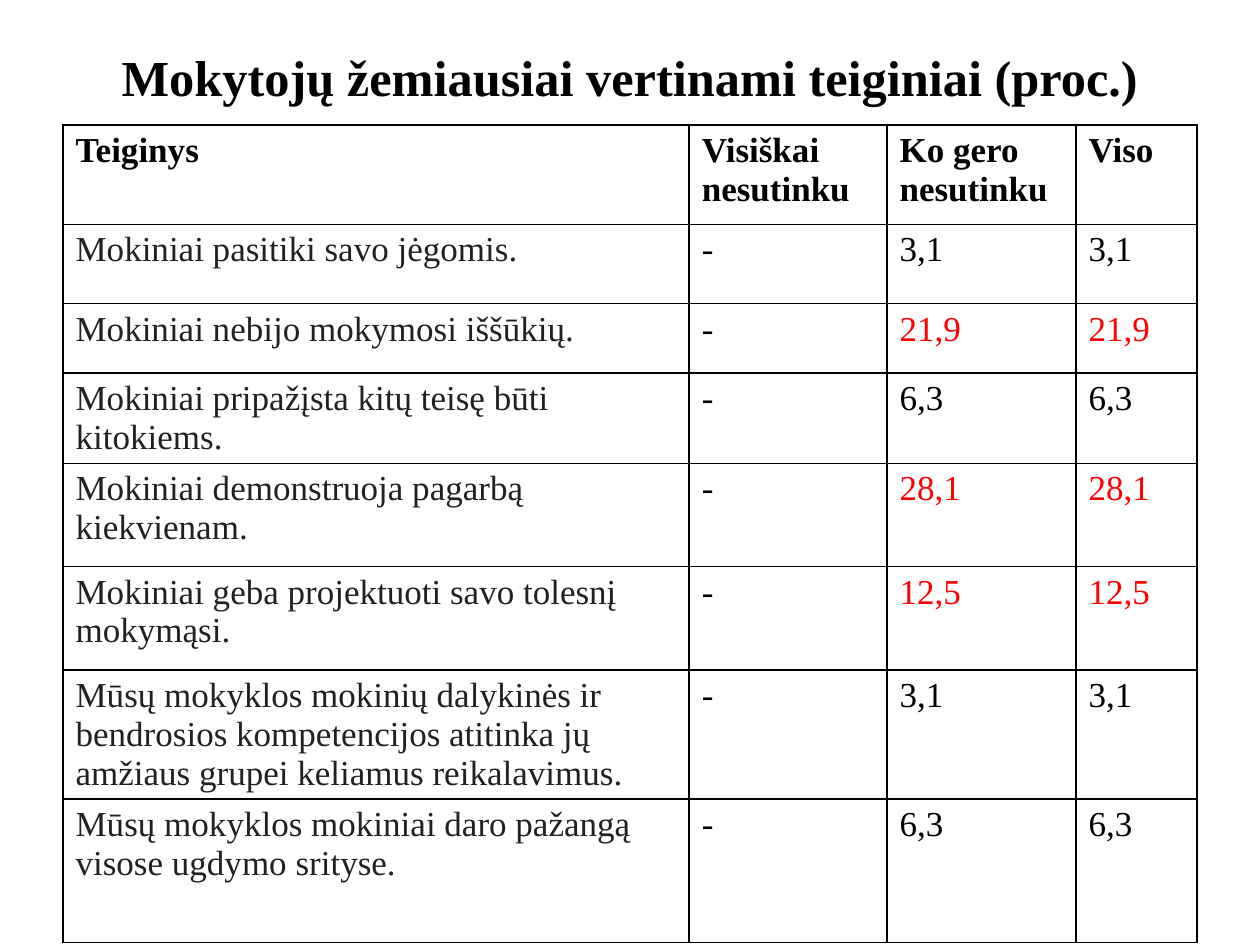
from dataclasses import dataclass

from lxml import etree
from pptx import Presentation
from pptx import util as u
from pptx.dml.color import RGBColor
from pptx.enum import text
from pptx.oxml import ns

EMU_PER_PX = 9144  # 100 px to the inch
FONT = "Times New Roman"
COLORS = {"black": "000000", "statement": "212121", "alert": "FF0000"}
ALERT_FROM = 10  # per cent
COLUMN_WIDTHS = [497, 157, 150, 96]
HEADER_HEIGHT = 79
HEADERS = ["Teiginys", "Visiškai nesutinku", "Ko gero nesutinku", "Viso"]


@dataclass
class Statement:
    wording: str
    rather_disagree: str
    height: int
    fully_disagree: str = "-"

    def cells(self) -> list[str]:
        """The total equals the only share that was given."""
        return [self.wording, self.fully_disagree, self.rather_disagree, self.rather_disagree]


STATEMENTS = [
    Statement("Mokiniai pasitiki savo jėgomis.", "3,1", 63),
    Statement("Mokiniai nebijo mokymosi iššūkių.", "21,9", 55),
    Statement("Mokiniai pripažįsta kitų teisę būti kitokiems.", "6,3", 46),
    Statement("Mokiniai demonstruoja pagarbą kiekvienam.", "28,1", 82),
    Statement("Mokiniai geba projektuoti savo tolesnį mokymąsi.", "12,5", 82),
    Statement("Mūsų mokyklos mokinių dalykinės ir bendrosios kompetencijos "
              "atitinka jų amžiaus grupei keliamus reikalavimus.", "3,1", 82),
    Statement("Mūsų mokyklos mokiniai daro pažangą visose ugdymo srityse.", "6,3", 114),
]


def px(length: int) -> u.Emu:
    return u.Emu(length * EMU_PER_PX)


def write(frame, wording: str, *, size: float, color: str = "black", bold: bool = False,
          align=text.PP_ALIGN.LEFT) -> None:
    paragraph = frame.paragraphs[0]
    paragraph.alignment = align
    run = paragraph.add_run()
    run.text = wording
    run.font.name = FONT
    run.font.size = u.Pt(size)
    run.font.bold = bold
    run.font.color.rgb = RGBColor.from_string(COLORS[color])


def add_borders(cell, color: str = "black", width: float = 1) -> None:
    properties = cell._tc.get_or_add_tcPr()
    for side in ("lnL", "lnR", "lnT", "lnB"):
        line = etree.SubElement(properties, ns.qn(f"a:{side}"), w=str(u.Pt(width)))
        fill = etree.SubElement(line, ns.qn("a:solidFill"))
        etree.SubElement(fill, ns.qn("a:srgbClr"), val=COLORS[color])


def value_color(value: str) -> str:
    if value == "-":
        return "black"
    return "alert" if float(value.replace(",", ".")) >= ALERT_FROM else "black"


def add_title(slide, wording: str) -> None:
    title = slide.shapes.title
    title.left, title.top, title.width, title.height = map(px, (50, 30, 900, 61))
    title.text_frame.vertical_anchor = text.MSO_ANCHOR.MIDDLE
    title.text_frame.word_wrap = True
    write(title.text_frame, wording, size=28.8, bold=True, align=text.PP_ALIGN.CENTER)


def add_statement_table(slide) -> None:
    rows = [HEADERS] + [statement.cells() for statement in STATEMENTS]
    heights = [HEADER_HEIGHT] + [statement.height for statement in STATEMENTS]
    table = slide.shapes.add_table(len(rows), len(HEADERS), px(50), px(99),
                                   px(sum(COLUMN_WIDTHS)), px(sum(heights))).table
    table.first_row = table.horz_banding = False
    for column, width in zip(table.columns, COLUMN_WIDTHS):
        column.width = px(width)
    for row_index, (row, height) in enumerate(zip(rows, heights)):
        table.rows[row_index].height = px(height)
        is_header = row_index == 0
        for column_index, wording in enumerate(row):
            cell = table.cell(row_index, column_index)
            add_borders(cell)
            cell.fill.background()
            if is_header:
                color = "black"
            else:
                color = "statement" if column_index == 0 else value_color(wording)
            write(cell.text_frame, wording, size=20, color=color, bold=is_header)


def main() -> None:
    presentation = Presentation()
    presentation.slide_width, presentation.slide_height = px(1000), px(750)
    slide = presentation.slides.add_slide(presentation.slide_layouts.get_by_name("Title Only"))
    add_title(slide, "Mokytojų žemiausiai vertinami teiginiai (proc.)")
    add_statement_table(slide)
    presentation.save("out.pptx")


if __name__ == "__main__":
    main()
